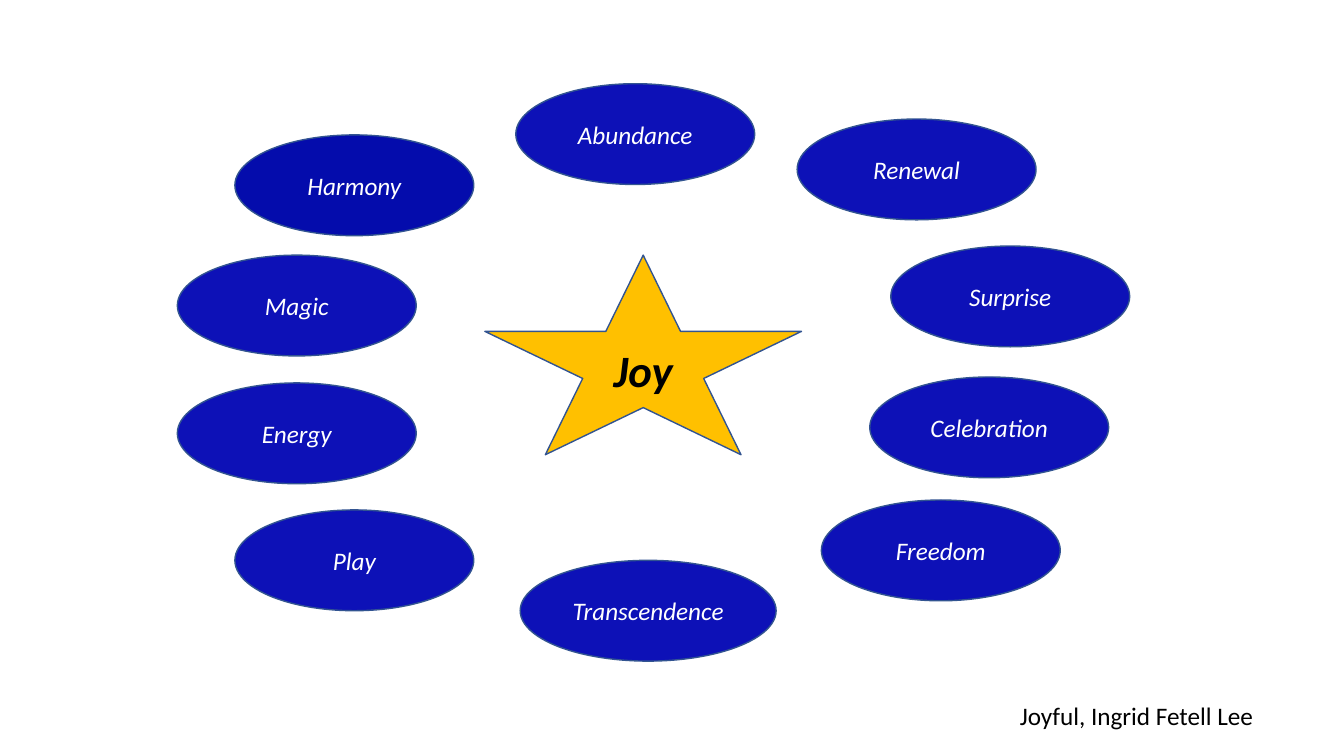
from pptx import Presentation
from pptx.dml.color import RGBColor
from pptx.enum.shapes import MSO_SHAPE
from pptx.enum.text import MSO_ANCHOR, MSO_AUTO_SIZE, PP_ALIGN
from pptx.util import Cm, Pt

STAR, OVAL = MSO_SHAPE.STAR_5_POINT, MSO_SHAPE.OVAL
CENTER, MIDDLE = PP_ALIGN.CENTER, MSO_ANCHOR.MIDDLE
FIT_SHAPE = MSO_AUTO_SIZE.SHAPE_TO_FIT_TEXT

COLORS = {
    "gold": "FFC000",
    "blue": "0D11B7",
    "deep_blue": "040CAC",
    "outline": "325491",
    "black": "000000",
    "white": "FFFFFF",
}
JOY_FONT = {"size": Pt(32), "bold": True, "italic": True}
WORD_FONT = {"size": Pt(18), "italic": True}
CREDIT_FONT = {"size": Pt(18)}

OVAL_W, OVAL_H = 6.02, 2.54
WIDE_OVAL_W = 6.45
LEFT_INNER, LEFT_OUTER = 5.92, 4.47

# word, left, top, width, fill
WORDS = [
    ("Celebration", 21.92, 9.5, OVAL_W, "blue"),
    ("Surprise", 22.45, 6.2, OVAL_W, "blue"),
    ("Harmony", LEFT_INNER, 3.4, OVAL_W, "deep_blue"),
    ("Magic", LEFT_OUTER, 6.43, OVAL_W, "blue"),
    ("Energy", LEFT_OUTER, 9.65, OVAL_W, "blue"),
    ("Transcendence", 13.11, 14.12, WIDE_OVAL_W, "blue"),
    ("Abundance", 13, 2.11, OVAL_W, "blue"),
    ("Renewal", 20.09, 3, OVAL_W, "blue"),
    ("Play", LEFT_INNER, 12.85, OVAL_W, "blue"),
    ("Freedom", 20.7, 12.6, OVAL_W, "blue"),
]


def write(tf, text, color, font):
    r = tf.paragraphs[0].add_run()
    r.text = text
    r.font.name = "Calibri"
    r.font.color.rgb = RGBColor.from_string(COLORS[color])
    for name, value in font.items():
        setattr(r.font, name, value)


def add_labelled_shape(kind, box, fill, text, color, font):
    sp = s.shapes.add_shape(kind, *[Cm(v) for v in box])
    sp.shadow.inherit = False
    sp.fill.solid()
    sp.fill.fore_color.rgb = RGBColor.from_string(COLORS[fill])
    sp.line.color.rgb = RGBColor.from_string(COLORS["outline"])
    sp.line.width = Pt(1)
    tf = sp.text_frame
    tf.vertical_anchor = MIDDLE
    tf.paragraphs[0].alignment = CENTER
    write(tf, text, color, font)


prs = Presentation()
prs.slide_width, prs.slide_height = Cm(33.87), Cm(19.05)
s = prs.slides.add_slide(prs.slide_layouts[6])

add_labelled_shape(STAR, (12.22, 6.43, 7.98, 5.03), "gold", "Joy", "black", JOY_FONT)

for word, left, top, width, fill in WORDS:
    add_labelled_shape(OVAL, (left, top, width, OVAL_H), fill, word, "white", WORD_FONT)

credit = s.shapes.add_textbox(Cm(25.45), Cm(17.53), Cm(6.48), Cm(1.02))
tf = credit.text_frame
tf.word_wrap = False
tf.auto_size = FIT_SHAPE
write(tf, "Joyful, Ingrid Fetell Lee", "black", CREDIT_FONT)

prs.save("out.pptx")
